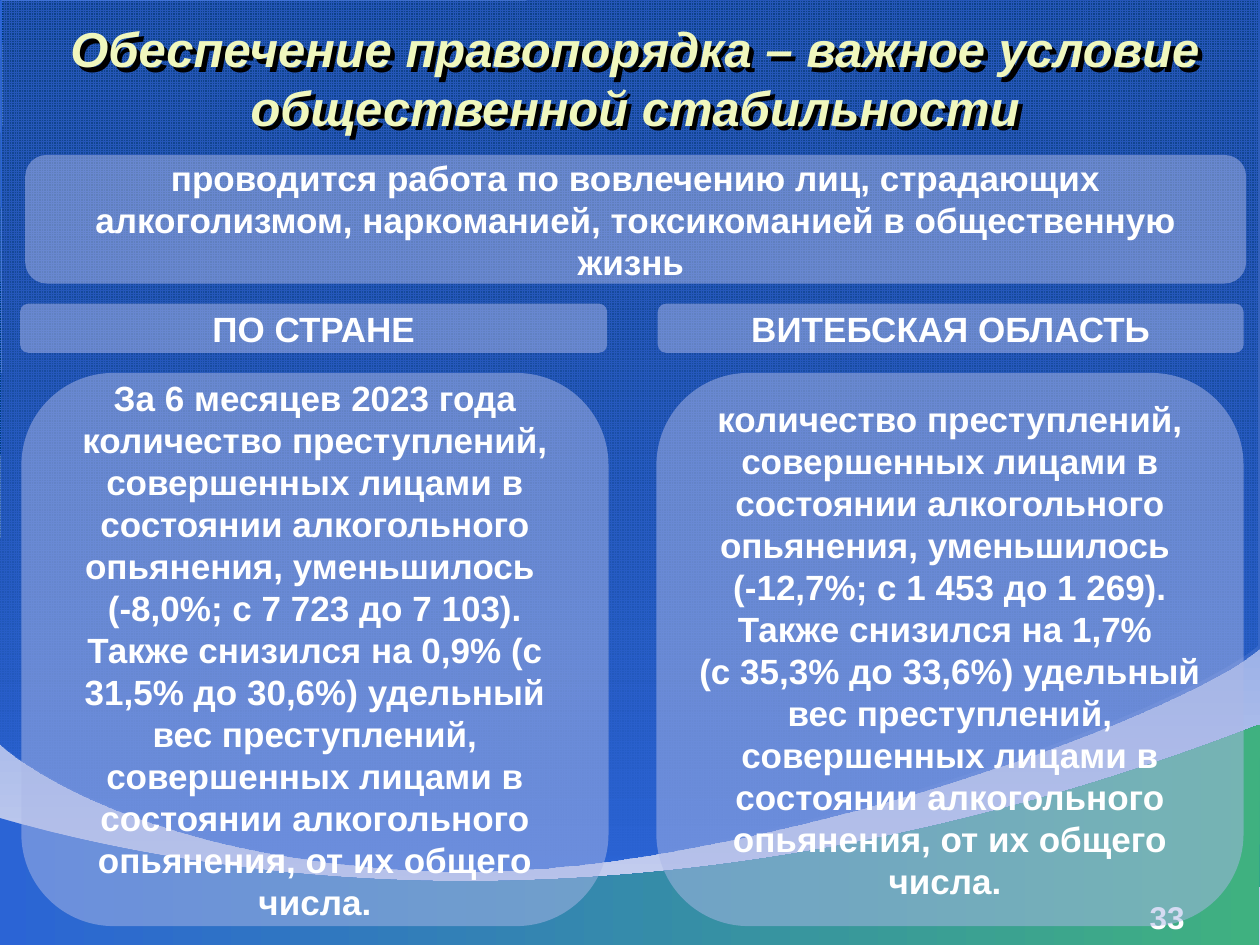
from lxml.etree import SubElement
from pptx import Presentation
from pptx.dml.color import RGBColor
from pptx.enum.dml import MSO_PATTERN
from pptx.enum.shapes import MSO_SHAPE
from pptx.enum.text import MSO_ANCHOR, PP_ALIGN
from pptx.oxml import parse_xml
from pptx.oxml.ns import nsdecls, qn
from pptx.util import Inches, Pt

BLUE, WHITE, PANEL = "2B64D5", "FFFFFF", "ACB8E7"

GRID_WAVE = [(-0.01, 5.89), [(0.11, 6.01), (1.1, 6.79), (3.42, 6.9)],
             [(5.73, 6.99), (9.34, 5.68), (9.99, 5.12)],
             (9.99, -0.02), (0, -0.01), (0.01, 0.01), (-0.01, 5.89)]
SHADE_WAVE = [(0, 5.9), [(0.12, 6.02), (1.12, 6.81), (3.43, 6.91)],
              [(5.75, 7.01), (9.36, 5.7), (10, 5.14)],
              (10, -0.01), (0.02, 0.01), (0.03, 0.02), (0, 5.9)]
FOOT_WAVE = [(-0.01, 6.49), [(0.11, 6.52), (1.29, 6.9), (3.05, 6.98)],
             [(4.81, 7.06), (7.22, 6.83), (10, 5.75)],
             (9.99, 7.5), (-0.03, 7.5), (-0.01, 6.49)]

TITLE = "Обеспечение правопорядка – важное условие общественной стабильности"
INTRO = ("проводится работа по вовлечению лиц, страдающих алкоголизмом, "
         "наркоманией, токсикоманией в общественную жизнь ")
CRIMES = "совершенных лицами в состоянии алкогольного опьянения,"
COUNTRY = (f"За 6 месяцев 2023 года количество преступлений, {CRIMES} уменьшилось \n"
           "(-8,0%; с 7 723 до 7 103). Также снизился на 0,9% (с 31,5% до 30,6%) "
           f"удельный вес преступлений, {CRIMES} от их общего числа.")
REGION = (f"количество преступлений, {CRIMES} уменьшилось \n"
          "(-12,7%; с 1 453 до 1 269). Также снизился на 1,7% \n"
          f"(с 35,3% до 33,6%) удельный вес преступлений, {CRIMES} от их общего числа. ")


def colour(value):
    """Turn a hex string into a colour."""
    return RGBColor.from_string(value)


def set_alpha(fill_element, percent):
    """Make the first colour inside a fill partly transparent."""
    first = next(fill_element.iter(qn("a:srgbClr")))
    SubElement(first, qn("a:alpha")).set("val", str(percent * 1000))


def fill_gradient(fill, start, end, angle):
    """Apply a two-colour linear gradient."""
    fill.gradient()
    fill.gradient_angle = angle
    for stop, value in zip(fill.gradient_stops, (start, end)):
        stop.color.rgb = colour(value)


def join_curve(lines):
    """Merge three line segments into one cubic curve with their points."""
    curve = parse_xml(f'<a:cubicBezTo {nsdecls("a")}/>')
    lines[0].addprevious(curve)
    for line in lines:
        curve.append(line[0])
        line.getparent().remove(line)


def add_wave(page, outline):
    """Add a closed shape whose outline mixes corners and cubic curves."""
    points, curve_starts = [], []
    for part in outline:
        if isinstance(part, list):
            curve_starts.append(len(points) - 1)
            points += part
        else:
            points.append(part)
    (x, y), *others = [(Inches(px), Inches(py)) for px, py in points]
    builder = page.shapes.build_freeform(x, y)
    builder.add_line_segments(others, close=True)
    wave = builder.convert_to_shape()
    lines = list(wave.element.iter(qn("a:lnTo")))
    for start in curve_starts:
        join_curve(lines[start:start + 3])
    wave.shadow.inherit = False
    wave.line.fill.background()
    return wave


def write(shape, text, size, value=WHITE, align=PP_ALIGN.CENTER,
          anchor=MSO_ANCHOR.MIDDLE):
    """Write one bold paragraph into a shape."""
    frame = shape.text_frame
    frame.word_wrap = True
    frame.vertical_anchor = anchor
    paragraph = frame.paragraphs[0]
    paragraph.text = text
    paragraph.alignment = align
    font = paragraph.font
    font.name, font.size, font.bold = "Arial", Pt(size), True
    font.color.rgb = colour(value)


def add_text(page, place, *style):
    """Add a text box."""
    box = page.shapes.add_textbox(*map(Inches, place))
    write(box, *style)
    return box


def add_panel(page, place, text):
    """Add a translucent rounded panel with centred text."""
    panel = page.shapes.add_shape(MSO_SHAPE.ROUNDED_RECTANGLE, *map(Inches, place))
    panel.shadow.inherit = False
    panel.line.fill.background()
    panel.fill.solid()
    panel.fill.fore_color.rgb = colour(PANEL)
    set_alpha(panel.element.spPr, 50)
    write(panel, text, 20)


def add_shadow(box):
    """Give the text of an unfilled box a black drop shadow."""
    box.element.spPr.append(parse_xml(
        f'<a:effectLst {nsdecls("a")}><a:outerShdw dist="45720" dir="2700000">'
        '<a:srgbClr val="000000"/></a:outerShdw></a:effectLst>'))


def add_backdrop(page):
    """Paint the background and its three waves."""
    fill_gradient(page.background.fill, BLUE, "CED4F0", 270)
    grid = add_wave(page, GRID_WAVE).fill
    grid.patterned()
    grid.pattern = MSO_PATTERN.SMALL_GRID
    grid.fore_color.rgb = colour(BLUE)
    grid.back_color.rgb = colour("003D7B")
    shade = add_wave(page, SHADE_WAVE)
    fill_gradient(shade.fill, "1F4898", BLUE, 270)
    set_alpha(shade.element.spPr, 46)
    fill_gradient(add_wave(page, FOOT_WAVE).fill, BLUE, "3FB180", 0)


def main():
    """Build the slide and save it."""
    deck = Presentation()
    deck.slide_width, deck.slide_height = Inches(10), Inches(7.5)
    page = deck.slides.add_slide(deck.slide_layouts[6])
    add_backdrop(page)
    add_text(page, (7.17, 7.08, 2.33, 0.27), "33", 18, WHITE,
             PP_ALIGN.RIGHT, MSO_ANCHOR.TOP)
    title = add_text(page, (0.04, 0, 10, 1.23), TITLE, 28, "F0F7BD")
    title.text_frame.paragraphs[0].font.italic = True
    add_shadow(title)
    add_panel(page, (0.2, 1.23, 9.69, 1.02), INTRO)
    add_panel(page, (0.16, 2.41, 4.66, 0.39), "ПО СТРАНЕ")
    add_panel(page, (5.22, 2.41, 4.65, 0.39), "ВИТЕБСКАЯ ОБЛАСТЬ")
    for left, text in ((0.17, COUNTRY), (5.21, REGION)):
        add_panel(page, (left, 2.96, 4.66, 4.39), text)
    deck.save("out.pptx")


if __name__ == "__main__":
    main()
